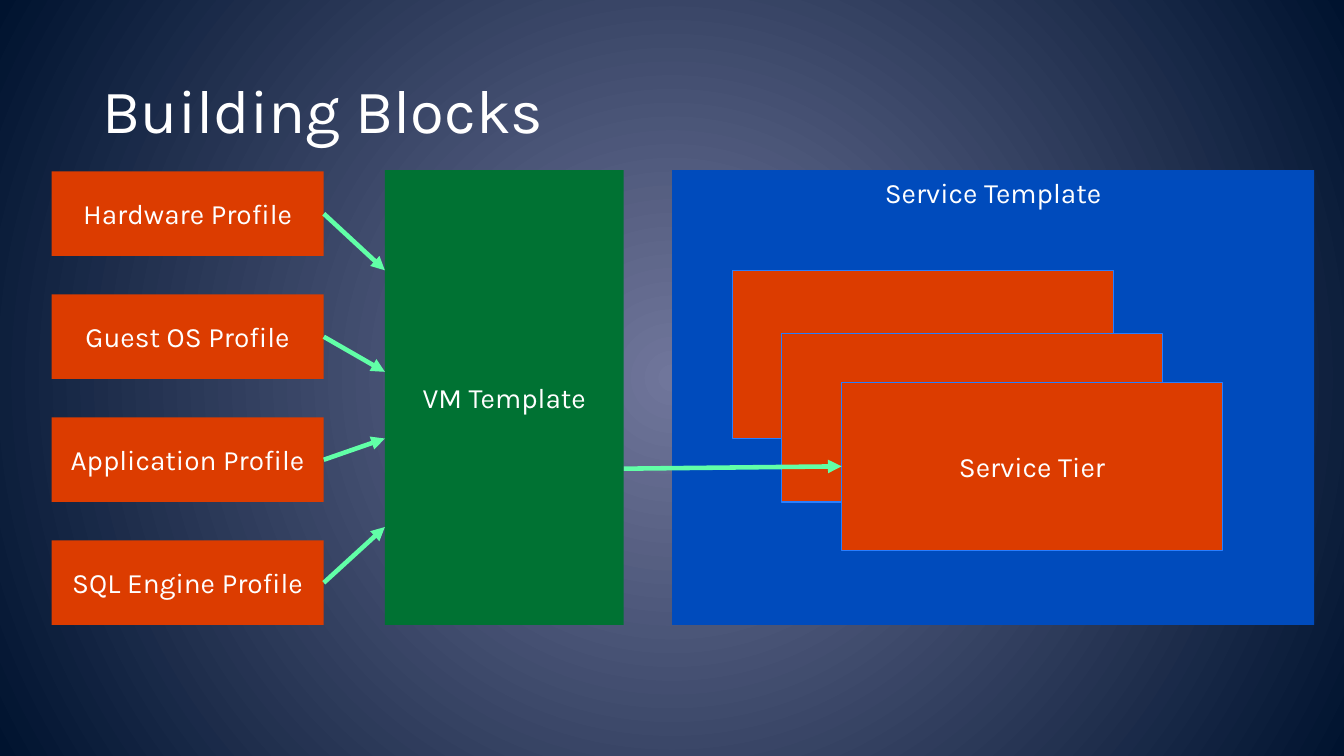
from lxml import etree
from pptx import Presentation
from pptx import util as u
from pptx.dml.color import RGBColor
from pptx.enum import shapes, text
from pptx.oxml import ns

WHITE = RGBColor(0xFF, 0xFF, 0xFF)
GREEN = RGBColor(0x00, 0x72, 0x33)
BLUE = RGBColor(0x00, 0x4B, 0xBC)
ORANGE = RGBColor(0xDC, 0x3C, 0x00)
OUTLINE = RGBColor(0x28, 0x7E, 0xFF)
MINT = RGBColor(0x61, 0xFF, 0xA7)
GLOW = RGBColor(0x70, 0x76, 0x9B)
NAVY = RGBColor(0x00, 0x13, 0x2F)

LEFT, RIGHT = 1, 3  # connection sites of a rectangle


def write(shape, words, size=20, align=text.PP_ALIGN.CENTER,
          anchor=text.MSO_ANCHOR.MIDDLE, side_inset=0, line_spacing=None):
    frame = shape.text_frame
    frame.word_wrap = True
    frame.vertical_anchor = anchor
    frame.margin_left = frame.margin_right = u.Cm(side_inset)
    paragraph = frame.paragraphs[0]
    paragraph.alignment = align
    paragraph.line_spacing = line_spacing
    run = paragraph.add_run()
    run.text = words
    run.font.name = "Karla"
    run.font.size = u.Pt(size)
    run.font.color.rgb = WHITE


class Diagram:
    """Holds the current slide and the style of its arrows and outlines."""

    arrow_width = u.Pt(3.25)
    outline_width = u.Pt(0.85)

    def __init__(self, slide):
        self.slide = slide

    def background(self, inner, outer):
        fill = self.slide.background.fill
        fill.gradient()
        for stop, color in zip(fill.gradient_stops, (inner, outer)):
            stop.color.rgb = color
        gradient = self.slide.element.find(".//" + ns.qn("a:gradFill"))
        gradient.remove(gradient.find(ns.qn("a:lin")))
        circle = etree.SubElement(gradient, ns.qn("a:path"), {"path": "circle"})
        etree.SubElement(circle, ns.qn("a:fillToRect"),
                         dict.fromkeys("ltrb", "50000"))

    def title(self, words, left, top, width, height):
        box = self.slide.shapes.add_textbox(*map(u.Cm, (left, top, width, height)))
        write(box, words, size=44, align=text.PP_ALIGN.LEFT,
              side_inset=0.25, line_spacing=0.9)

    def block(self, left, top, width, height, color, words="", outline=None, **style):
        shape = self.slide.shapes.add_shape(
            shapes.MSO_SHAPE.RECTANGLE, *map(u.Cm, (left, top, width, height)))
        shape.shadow.inherit = False
        shape.fill.solid()
        shape.fill.fore_color.rgb = color
        if outline is None:
            shape.line.fill.background()
        else:
            shape.line.color.rgb = outline
            shape.line.width = self.outline_width
        if words:
            write(shape, words, **style)
        return shape

    def arrow(self, start, end, source=None, target=None):
        connector = self.slide.shapes.add_connector(
            shapes.MSO_CONNECTOR.STRAIGHT, *map(u.Cm, start + end))
        if source is not None:
            connector.begin_connect(source, RIGHT)
        if target is not None:
            connector.end_connect(target, LEFT)
        connector.line.color.rgb = MINT
        connector.line.width = self.arrow_width
        line = connector.element.spPr.find(ns.qn("a:ln"))
        etree.SubElement(line, ns.qn("a:tailEnd"), type="triangle")
        etree.SubElement(connector.element.spPr, ns.qn("a:effectLst"))


def main():
    presentation = Presentation()
    presentation.slide_width = u.Cm(33.87)
    presentation.slide_height = u.Cm(19.05)
    diagram = Diagram(presentation.slides.add_slide(presentation.slide_layouts[6]))
    diagram.background(GLOW, NAVY)
    diagram.title("Building Blocks", 2.34, 1.02, 29.21, 3.68)

    # Templates
    vm_left, vm_width, top, height = 9.7, 6.02, 4.29, 11.46
    diagram.block(vm_left, top, vm_width, height, GREEN, "VM Template")
    diagram.block(16.94, top, 16.18, height, BLUE, "Service Template",
                  anchor=text.MSO_ANCHOR.TOP)

    # Profiles, each with the height where its arrow meets the VM template
    profile_left, profile_top, profile_width, profile_height = 1.3, 4.32, 6.86, 2.13
    pitch = 3.1
    profiles = [("Hardware Profile", 6.81), ("Guest OS Profile", 9.37),
                ("Application Profile", 11.05), ("SQL Engine Profile", 13.28)]
    for row, (name, arrow_end) in enumerate(profiles):
        row_top = profile_top + row * pitch
        profile = diagram.block(profile_left, row_top, profile_width,
                                profile_height, ORANGE, name)
        diagram.arrow((profile_left + profile_width, row_top + profile_height / 2),
                      (vm_left, arrow_end), source=profile)

    # Stacked service tiers, the front one last
    tiers = [(18.47, 6.81, ""), (19.69, 8.41, ""), (21.21, 9.63, "Service Tier")]
    for tier_left, tier_top, name in tiers:
        tier = diagram.block(tier_left, tier_top, 9.6, 4.24, ORANGE, name,
                             outline=OUTLINE)
    diagram.arrow((vm_left + vm_width, 11.81), (tier_left, 11.75), target=tier)

    presentation.save("out.pptx")


if __name__ == "__main__":
    main()
